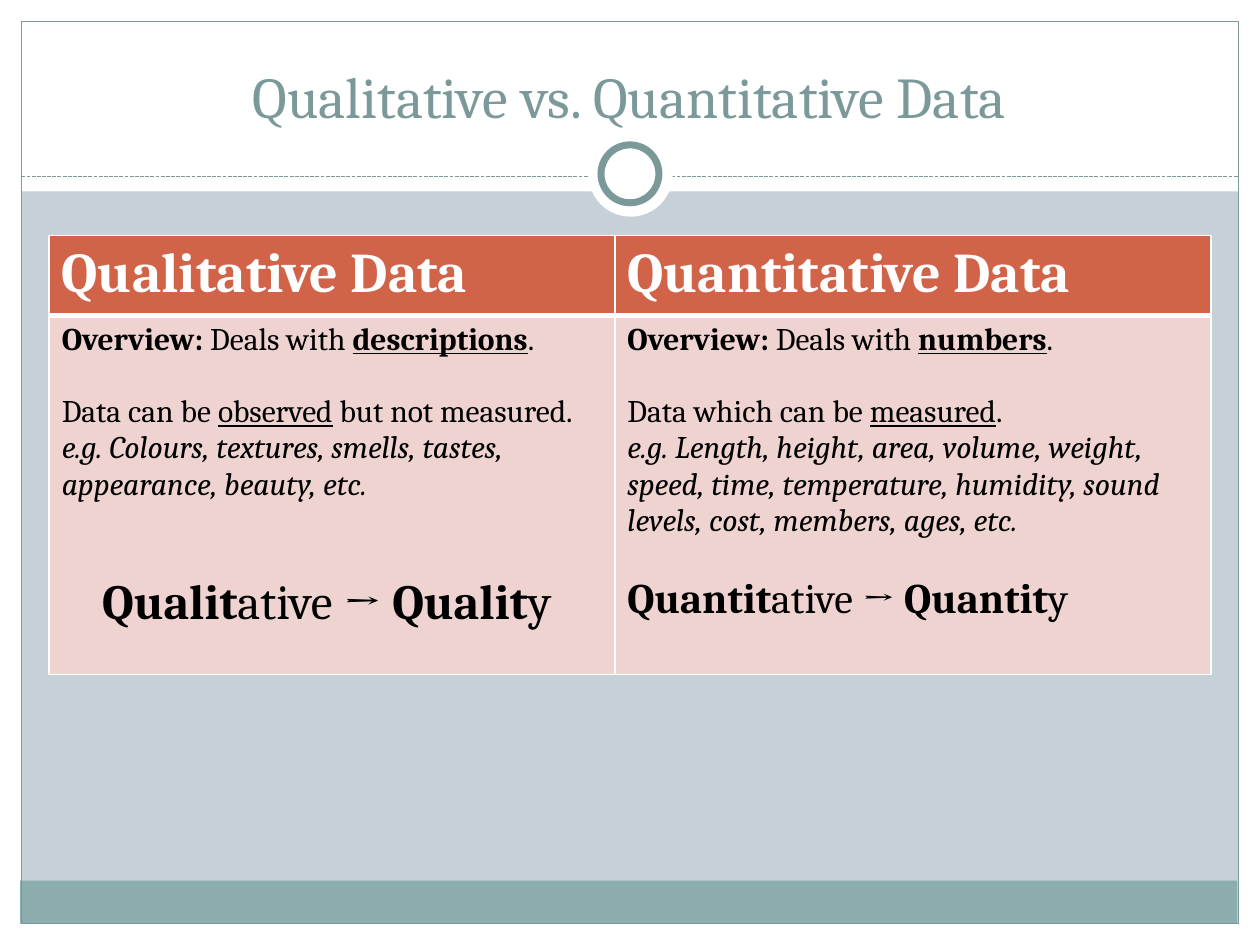
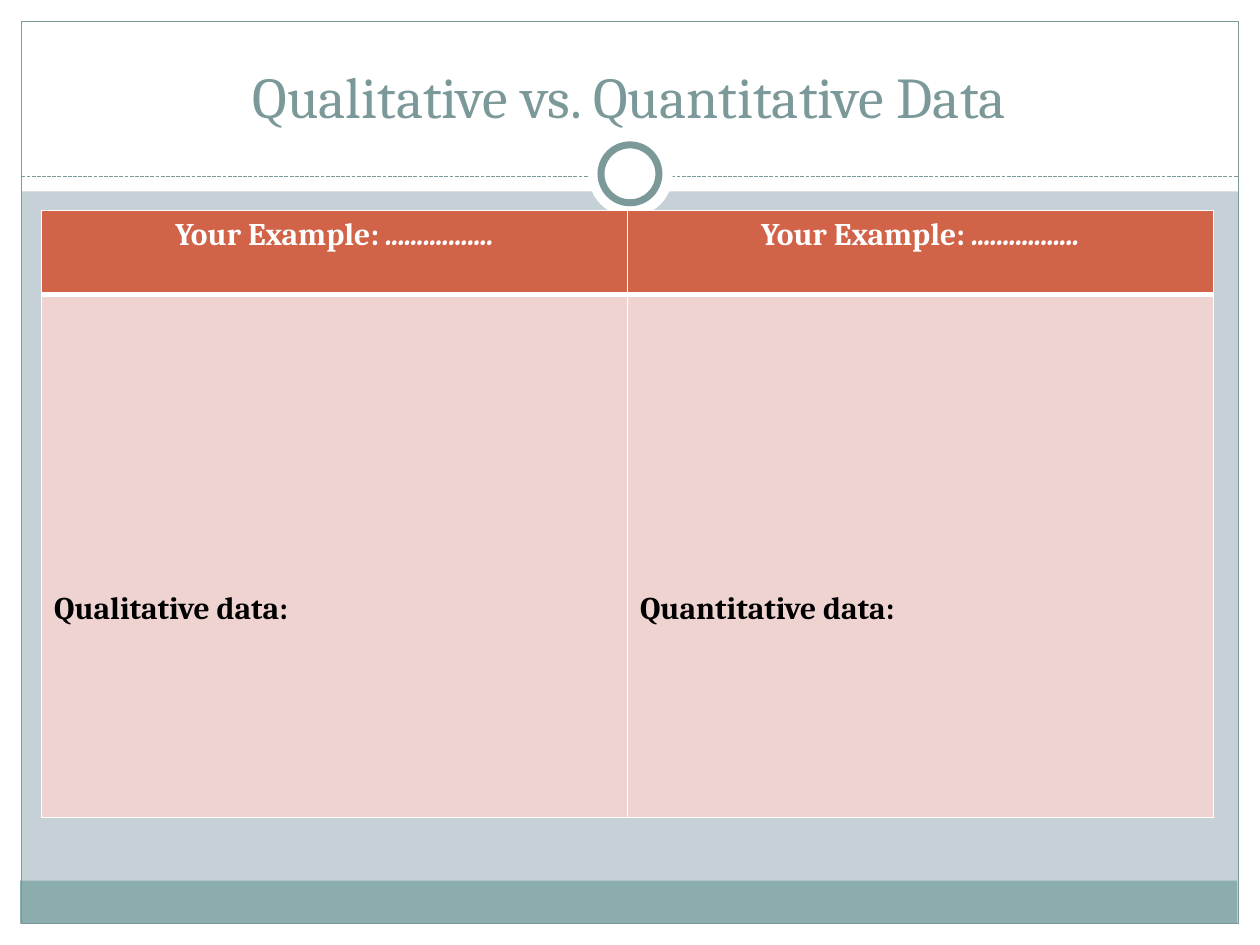
from dataclasses import dataclass

from lxml import etree
from pptx import Presentation
from pptx import util as u
from pptx.dml.color import RGBColor
from pptx.enum import dml, shapes, text
from pptx.oxml import ns

SHAPE = shapes.MSO_SHAPE
LEFT, MID = text.PP_ALIGN.LEFT, text.PP_ALIGN.CENTER


@dataclass(frozen=True)
class Theme:
    font: str = "Cambria"
    back: str = "C5D1D7"
    white: str = "FFFFFF"
    black: str = "000000"
    slate: str = "7C999A"
    teal: str = "8CADAE"
    rust: str = "D16349"
    pink: str = "EED3D0"
    title: float = 33
    head: float = 32
    large: float = 28
    mid: float = 24
    body: float = 18
    gap: float = 20.6  # height of one body line


T = Theme()

# A run is (words, marks): b bold, i italic, u underlined.
# A paragraph is (size, align, space before, runs).
TITLE = "Qualitative vs. Quantitative Data"
BLANK = [(T.body, MID, 0, [("Your Example: ", "b"), (".................", "bi")])]

SLIDES = [
    dict(
        at=(0.39, 1.87), cols=(4.49, 4.73), rows=(0.62, 2.85), drop=0.05,
        cells=[
            [
                [(T.head, LEFT, 0, [("Qualitative Data", "b")])],
                [(T.head, LEFT, 0, [("Quantitative Data", "b")])],
            ],
            [
                [
                    (T.body, LEFT, 0, [("Overview:", "b"), (" Deals with ", ""),
                                       ("descriptions", "bu"), (".", "")]),
                    (T.body, LEFT, T.gap, [
                        ("Data can be ", ""), ("observed", "u"), (" but not measured. ", ""),
                        ("e.g. Colours, textures, smells, tastes, appearance, "
                         "beauty, etc.", "i")]),
                    (T.large, MID, 2 * T.gap, [("Qualit", "b"), ("ative → ", ""),
                                               ("Qualit", "b"), ("y ", "")]),
                ],
                [
                    (T.body, LEFT, 0, [("Overview: ", "b"), ("Deals with ", ""),
                                       ("numbers", "bu"), (".", "")]),
                    (T.body, LEFT, T.gap, [("Data which can be ", ""),
                                           ("measured", "u"), (".", "")]),
                    (T.body, LEFT, 0, [
                        ("e.g. Length, height, area, volume, weight, speed, time, "
                         "temperature, humidity, sound levels, cost, members, ages, "
                         "etc.", "i")]),
                    (T.mid, LEFT, T.gap, [("Quantit", "b"), ("ative → ", ""),
                                          ("Quantit", "b"), ("y", "")]),
                ],
            ],
        ],
    ),
    dict(
        at=(0.33, 1.67), cols=(4.65, 4.65), rows=(0.67, 4.15), drop=2.35,
        cells=[
            [BLANK, BLANK],
            [
                [(T.body, LEFT, 0, [("Qualitative data:", "b")])],
                [(T.body, LEFT, 0, [("Quantitative data:", "b")])],
            ],
        ],
    ),
]

WIDE, HIGH, EDGE = 10, 7.5, 0.17
RULE = 1.4

# kind, box, fill, line colour, line width
PARTS = [
    (SHAPE.RECTANGLE, (0, HIGH - EDGE, WIDE, EDGE), T.white, None, 0),
    (SHAPE.RECTANGLE, (0, 0, WIDE, 1.52), T.white, None, 0),
    (SHAPE.RECTANGLE, (0, 0, EDGE, HIGH), T.white, None, 0),
    (SHAPE.RECTANGLE, (WIDE - EDGE, 0, EDGE, HIGH), T.white, None, 0),
    (SHAPE.RECTANGLE, (0.16, 6.99, 9.66, 0.34), T.teal, None, 0),
    (SHAPE.RECTANGLE, (EDGE, EDGE, WIDE - 2 * EDGE, HIGH - 2 * EDGE),
     None, T.slate, 0.75),
]
RINGS = [
    (SHAPE.OVAL, (4.67, 1.05, 0.67, 0.67), T.white, None, 0),
    (SHAPE.OVAL, (4.77, 1.15, 0.46, 0.46), T.white, T.slate, 4),
]


def inch(nums):
    return [u.Inches(n) for n in nums]


def put(item, values):
    """Set each named attribute of item."""
    for name, value in values.items():
        setattr(item, name, value)


def paint(fill, tint):
    if tint:
        fill.solid()
        fill.fore_color.rgb = RGBColor.from_string(tint)
    else:
        fill.background()


def draw(slide, parts):
    for kind, box, fill, tint, width in parts:
        shape = slide.shapes.add_shape(kind, *inch(box))
        shape.shadow.inherit = False
        paint(shape.fill, fill)
        paint(shape.line.fill, tint)
        if tint:
            shape.line.width = u.Pt(width)


def rule(slide):
    """Draw the dashed line below the title."""
    ends = inch((EDGE, RULE, WIDE - EDGE, RULE))
    line = slide.shapes.add_connector(shapes.MSO_CONNECTOR.STRAIGHT, *ends)
    paint(line.line.fill, T.slate)
    put(line.line, dict(width=u.Pt(0.75), dash_style=dml.MSO_LINE.SQUARE_DOT))
    etree.SubElement(line._element.spPr, ns.qn("a:effectLst"))


def write(frame, paras, tint):
    for spot, (size, align, space, runs) in enumerate(paras):
        para = frame.add_paragraph() if spot else frame.paragraphs[0]
        put(para, dict(alignment=align, space_before=u.Pt(space)))
        for words, marks in runs:
            run = para.add_run()
            run.text = words
            put(run.font, dict(name=T.font, size=u.Pt(size), bold="b" in marks,
                               italic="i" in marks, underline="u" in marks))
            run.font.color.rgb = RGBColor.from_string(tint)


def border(cell, widths):
    """Add white cell borders; widths maps a side to points."""
    props = cell._tc.get_or_add_tcPr()
    for spot, side in enumerate("LRTB"):
        line = etree.Element(ns.qn("a:ln" + side), w=str(u.Pt(widths.get(side, 1))))
        fill = etree.SubElement(line, ns.qn("a:solidFill"))
        etree.SubElement(fill, ns.qn("a:srgbClr"), val=T.white)
        props.insert(spot, line)


def head(slide):
    box = slide.shapes.add_textbox(*inch((0.33, 0.25, 9.33, 0.83)))
    put(box.text_frame, dict(word_wrap=True, vertical_anchor=text.MSO_ANCHOR.BOTTOM))
    write(box.text_frame, [(T.title, MID, 0, [(TITLE, "")])], T.slate)


def grid(slide, at, cols, rows, drop, cells):
    """Add the table; drop is the top margin of its body cells."""
    box = inch((*at, sum(cols), sum(rows)))
    table = slide.shapes.add_table(len(rows), len(cols), *box).table
    put(table, dict(first_row=False, horz_banding=False))
    for col, width in zip(table.columns, cols):
        col.width = u.Inches(width)
    looks = [(T.rust, T.white, 0.05, {"B": 3}), (T.pink, T.black, drop, {"T": 3})]
    for row, high, line, look in zip(table.rows, rows, cells, looks):
        row.height = u.Inches(high)
        fill, tint, top, widths = look
        for cell, paras in zip(row.cells, line):
            paint(cell.fill, fill)
            cell.margin_top = u.Inches(top)
            border(cell, widths)
            write(cell.text_frame, paras, tint)


def main():
    deck = Presentation()
    put(deck, dict(slide_width=u.Inches(WIDE), slide_height=u.Inches(HIGH)))
    for facts in SLIDES:
        slide = deck.slides.add_slide(deck.slide_layouts[6])
        paint(slide.background.fill, T.back)
        draw(slide, PARTS)
        rule(slide)
        draw(slide, RINGS)
        head(slide)
        grid(slide, **facts)
    deck.save("out.pptx")


if __name__ == "__main__":
    main()
